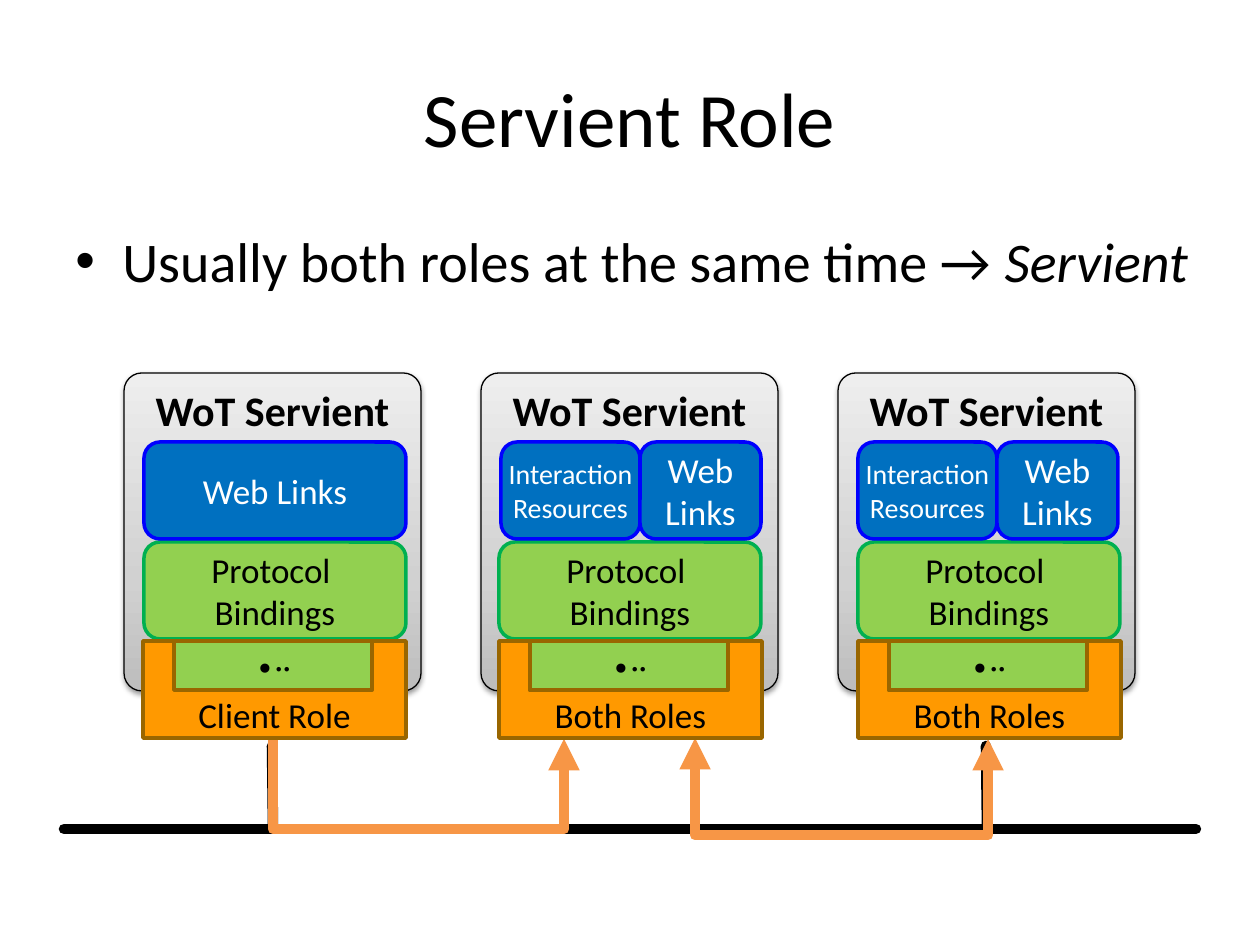
from dataclasses import dataclass

from lxml.etree import SubElement
from pptx import Presentation
from pptx.dml.color import RGBColor
from pptx.enum.shapes import MSO_CONNECTOR as CONN, MSO_SHAPE as SHAPE
from pptx.enum.text import MSO_ANCHOR as ANCHOR, PP_ALIGN as ALIGN
from pptx.oxml.ns import qn
from pptx.util import Emu, Pt

EMU_PER_PX = 914400 / 126


@dataclass(frozen=True)
class Theme:
    font: str = "Calibri"
    black: str = "000000"
    white: str = "FFFFFF"
    blue: str = "0070C0"
    blue_line: str = "0000FF"
    green: str = "92D050"
    green_line: str = "00B050"
    orange: str = "FF9900"
    brown_line: str = "996600"
    arrow: str = "F79646"
    card_stops: tuple = ((0, "BDBDBD"), (35, "D1D1D1"), (100, "EEEEEE"))
    title: int = 44
    body: int = 32
    heading: int = 24
    label: int = 20
    dots: int = 18
    small: int = 16


T = Theme()


def px(n):
    return Emu(round(n * EMU_PER_PX))


def rgb(value):
    return RGBColor.from_string(value)


def add_xml(parent, tag, **attrs):
    return SubElement(parent, qn(tag), {k: str(v) for k, v in attrs.items()})


def write(sp, text, size, color=T.black, bold=False, anchor=ANCHOR.MIDDLE,
          align=ALIGN.CENTER, wrap=True):
    tf = sp.text_frame
    tf.text = text
    tf.word_wrap = wrap
    tf.vertical_anchor = anchor
    p = tf.paragraphs[0]
    p.alignment = align
    for r in p.runs:
        style_run(r, size, color, bold)
    return p


def style_run(r, size, color=T.black, bold=False, italic=False):
    f = r.font
    f.name, f.size, f.bold, f.italic = T.font, Pt(size), bold, italic
    f.color.rgb = rgb(color)


def paint(sp, fill, line, width=2):
    sp.shadow.inherit = False
    sp.fill.solid()
    sp.fill.fore_color.rgb = rgb(fill)
    sp.line.color.rgb = rgb(line)
    sp.line.width = Pt(width)


def add_box(s, box, fill, line, text, size, color=T.black, kind=SHAPE.ROUNDED_RECTANGLE,
            width=2):
    sp = s.shapes.add_shape(kind, *map(px, box))
    paint(sp, fill, line, width)
    write(sp, text, size, color)
    return sp


def add_title(s, text):
    sp = s.shapes.add_textbox(px(63), px(38), px(1134), px(157))
    write(sp, text, T.title)


def add_bullet(s, text, emphasis):
    sp = s.shapes.add_textbox(px(63), px(220), px(1172), px(624))
    p = write(sp, text, T.body, anchor=ANCHOR.TOP, align=ALIGN.LEFT)
    r = p.add_run()
    r.text = emphasis
    style_run(r, T.body, italic=True)
    p.space_before = Pt(6)
    pPr = p._p.get_or_add_pPr()
    pPr.set("marL", str(px(47)))
    pPr.set("indent", str(px(-47)))
    add_xml(pPr, "a:buFont", typeface="Arial")
    add_xml(pPr, "a:buChar", char="•")


def add_card(s, x):
    """Grey gradient panel with a soft shadow behind one servient."""
    sp = s.shapes.add_shape(SHAPE.ROUNDED_RECTANGLE, px(x), px(373), px(297), px(318))
    sp.adjustments[0] = 0.06
    paint(sp, T.white, T.black, 0.75)
    sp.fill.gradient()
    sp.fill.gradient_angle = 90
    spPr = sp._element.spPr
    stops = spPr.find(".//" + qn("a:gsLst"))
    for stop in list(stops):
        stops.remove(stop)
    for pos, color in T.card_stops:
        add_xml(add_xml(stops, "a:gs", pos=pos * 1000), "a:srgbClr", val=color)
    shadow = add_xml(spPr.find(qn("a:effectLst")), "a:outerShdw", blurRad=Pt(3),
                     dist=Pt(1.6), dir=5400000, rotWithShape=0)
    add_xml(add_xml(shadow, "a:srgbClr", val=T.black), "a:alpha", val=38000)
    write(sp, "WoT Servient", T.heading, bold=True, anchor=ANCHOR.TOP, wrap=False)


def style_line(c, color, head=False, tail=False):
    c.line.color.rgb = rgb(color)
    c.line.width = Pt(6)
    ln = c.line._get_or_add_ln()
    ln.set("cap", "rnd")
    add_xml(ln, "a:round")
    if head:
        add_xml(ln, "a:headEnd", type="triangle")
    if tail:
        add_xml(ln, "a:tailEnd", type="triangle")
    add_xml(c._element.spPr, "a:effectLst")


def add_line(s, x1, y1, x2, y2):
    c = s.shapes.add_connector(CONN.STRAIGHT, px(x1), px(y1), px(x2), px(y2))
    style_line(c, T.black)


def add_elbow(s, x1, x2, y, drop, head=False):
    """U-shaped arrow: down by drop from (x1, y), across, and up to x2.

    The connector is a 1 px wide one turned by 270 degrees, so its
    adjustment is the drop counted in widths.
    """
    span, mid = x2 - x1, (x1 + x2) / 2
    left, top = mid - 0.5, y + 0.5 - span / 2
    c = s.shapes.add_connector(CONN.ELBOW, px(left), px(top), px(left + 1), px(top + span))
    xfrm = c._element.spPr.find(qn("a:xfrm"))
    xfrm.set("rot", "16200000")
    xfrm.set("flipH", "1")
    geom = c._element.spPr.find(qn("a:prstGeom"))
    guides = geom.find(qn("a:avLst"))
    if guides is None:
        guides = add_xml(geom, "a:avLst")
    add_xml(guides, "a:gd", name="adj1", fmla=f"val {drop * 100000}")
    style_line(c, T.arrow, head, tail=True)


def add_role(s, x, text):
    """Orange bracket naming the role, with the binding slot in its notch."""
    y, w, h, notch_x, notch_w, notch_h = 641, 263, 97, 31, 198, 49
    right = notch_x + notch_w
    outline = [(notch_x, 0), (notch_x, notch_h), (right, notch_h), (right, 0),
               (w, 0), (w, h), (0, h)]
    fb = s.shapes.build_freeform(px(x), px(y))
    fb.add_line_segments([(px(x + dx), px(y + dy)) for dx, dy in outline], close=True)
    sp = fb.convert_to_shape()
    paint(sp, T.orange, T.brown_line)
    write(sp, text, T.label, anchor=ANCHOR.BOTTOM)
    sp.text_frame.margin_top, sp.text_frame.margin_bottom = 0, px(3)
    add_box(s, (x + notch_x, y, notch_w, notch_h), T.green, T.brown_line, "∙··",
            T.dots, kind=SHAPE.RECTANGLE, width=2.25)


def add_links(s, x, has_resources):
    y, h = 442, 97
    style = T.blue, T.blue_line
    if not has_resources:
        add_box(s, (x, y, 262, h), *style, "Web Links", T.label, T.white)
        return
    sp = add_box(s, (x, y, 139, h), *style, "Interaction\vResources", T.small, T.white)
    sp.text_frame.margin_left = sp.text_frame.margin_right = 0
    add_box(s, (x + 139, y, 121, h), *style, "Web\vLinks", T.label, T.white)


def main():
    prs = Presentation()
    prs.slide_width, prs.slide_height = px(1260), px(945)
    s = prs.slides.add_slide(prs.slide_layouts[6])
    add_title(s, "Servient Role")
    add_bullet(s, "Usually both roles at the same time → ", "Servient")

    cards = [124 + 357 * i for i in range(3)]
    for x in cards:
        add_card(s, x)
    add_line(s, 64, 829, 1196, 829)
    for x in (cards[0], cards[2]):
        add_line(s, x + 149, 827, x + 148, 746)
    add_elbow(s, 273, 564, 738, 92)
    add_elbow(s, 695, 988, 738, 98, head=True)

    roles = ("Client Role", 20), ("Both Roles", 18), ("Both Roles", 20)
    for x, (role, inset) in zip(cards, roles):
        add_box(s, (x + inset, 542, 262, 97), T.green, T.green_line,
                "Protocol \vBindings", T.label)
        add_role(s, x + inset - (role == "Client Role"), role)
        add_links(s, x + 20, role == "Both Roles")
    prs.save("out.pptx")


if __name__ == "__main__":
    main()
